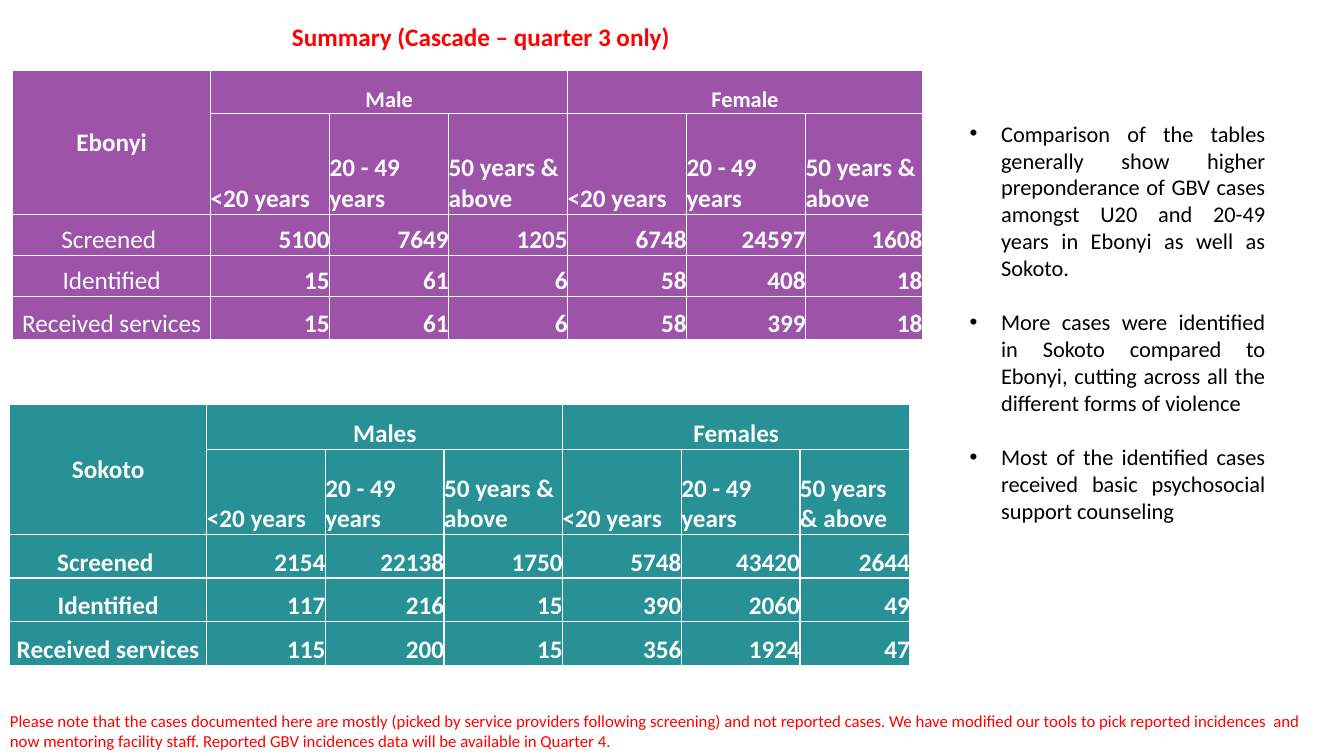
from dataclasses import dataclass

from lxml.etree import SubElement
from pptx import Presentation
from pptx.dml.color import RGBColor
from pptx.enum.text import MSO_ANCHOR, PP_ALIGN
from pptx.oxml.ns import qn
from pptx.slide import Slide
from pptx.table import _Cell
from pptx.text.text import TextFrame, _Paragraph
from pptx.util import Pt

FONT = "Calibri"
RED, BLACK, PALE = "FF0000", "000000", "FAFBFF"
AGES = ["<20 years", "20 - 49 years", "50 years & above"]
STAGES = ["Screened ", "Identified", "Received services"]


@dataclass
class Cascade:
    state: str
    sexes: tuple[str, str]
    counts: list[list[int]]
    fill: str
    left: float
    top: float
    columns: list[float]
    rows: list[float]
    sex_size: float
    bold_stages: bool


CASCADES = [
    Cascade(
        "Ebonyi", ("Male", "Female"),
        [[5100, 7649, 1205, 6748, 24597, 1608],
         [15, 61, 6, 58, 408, 18],
         [15, 61, 6, 58, 399, 18]],
        "9D53A7", 9, 50.5, [141.5] + [85] * 5 + [83.5],
        [30.5, 72, 29.5, 29.5, 30.5], 16, False,
    ),
    Cascade(
        "Sokoto", ("Males", "Females"),
        [[2154, 22138, 1750, 5748, 43420, 2644],
         [117, 216, 15, 390, 2060, 49],
         [115, 200, 15, 356, 1924, 47]],
        "289195", 6.75, 289, [141] + [84.75] * 5 + [78.5],
        [32, 61, 31, 31, 31.5], 18, True,
    ),
]

FINDINGS = [
    "Comparison of the tables generally show higher preponderance of GBV cases "
    "amongst U20 and 20-49 years in Ebonyi as well as Sokoto. ",
    "More cases were identified in Sokoto compared to Ebonyi, cutting across all "
    "the different forms of violence",
    "Most of the identified cases received basic psychosocial support counseling ",
]
NOTE = (
    "Please note that the cases documented here are mostly (picked by service "
    "providers following screening) and not reported cases. We have modified our "
    "tools to pick reported incidences  and now mentoring facility staff. Reported "
    "GBV incidences data will be available in Quarter 4."
)


def rgb(color: str) -> RGBColor:
    return RGBColor.from_string(color)


def write(paragraph: _Paragraph, text: str, *, size: float, color: str,
          bold: bool = False, align: PP_ALIGN = PP_ALIGN.LEFT) -> None:
    paragraph.alignment = align
    run = paragraph.add_run()
    run.text = text
    run.font.name = FONT
    run.font.size = Pt(size)
    run.font.bold = bold
    run.font.color.rgb = rgb(color)


def add_text_frame(slide: Slide, left: float, top: float,
                   width: float, height: float) -> TextFrame:
    box = slide.shapes.add_textbox(Pt(left), Pt(top), Pt(width), Pt(height))
    box.text_frame.word_wrap = True
    return box.text_frame


def add_bullet(paragraph: _Paragraph, indent: float) -> None:
    properties = paragraph._p.get_or_add_pPr()
    properties.set("marL", str(Pt(indent)))
    properties.set("indent", str(-Pt(indent)))
    SubElement(properties, qn("a:buFont"), typeface="Arial")
    SubElement(properties, qn("a:buChar"), char="•")


def style_cell(cell: _Cell, fill: str) -> None:
    properties = cell._tc.get_or_add_tcPr()
    for side in ("lnL", "lnR", "lnT", "lnB"):
        line = SubElement(properties, qn(f"a:{side}"), w=str(Pt(1)))
        solid = SubElement(line, qn("a:solidFill"))
        SubElement(solid, qn("a:srgbClr"), val=PALE)
    cell.fill.solid()
    cell.fill.fore_color.rgb = rgb(fill)
    cell.margin_left = cell.margin_right = 0
    cell.margin_top = cell.margin_bottom = 0
    cell.vertical_anchor = MSO_ANCHOR.BOTTOM


def add_cascade(slide: Slide, cascade: Cascade) -> None:
    table = slide.shapes.add_table(
        len(cascade.rows), len(cascade.columns), Pt(cascade.left), Pt(cascade.top),
        Pt(sum(cascade.columns)), Pt(sum(cascade.rows)),
    ).table
    table.first_row = table.horz_banding = False
    for column, width in zip(table.columns, cascade.columns):
        column.width = Pt(width)
    for row, height in zip(table.rows, cascade.rows):
        row.height = Pt(height)
    for cell in table.iter_cells():
        style_cell(cell, cascade.fill)

    def fill_in(row: int, column: int, text: str, align: PP_ALIGN,
                size: float = 18, bold: bool = True) -> None:
        paragraph = table.cell(row, column).text_frame.paragraphs[0]
        write(paragraph, text, size=size, color=PALE, bold=bold, align=align)

    table.cell(0, 0).merge(table.cell(1, 0))
    table.cell(0, 0).vertical_anchor = MSO_ANCHOR.MIDDLE
    fill_in(0, 0, cascade.state, PP_ALIGN.CENTER)
    for index, sex in enumerate(cascade.sexes):
        first = 1 + index * len(AGES)
        table.cell(0, first).merge(table.cell(0, first + len(AGES) - 1))
        fill_in(0, first, sex, PP_ALIGN.CENTER, size=cascade.sex_size)
        for column, age in enumerate(AGES, first):
            fill_in(1, column, age, PP_ALIGN.LEFT)
    for row, (stage, counts) in enumerate(zip(STAGES, cascade.counts), 2):
        fill_in(row, 0, stage, PP_ALIGN.CENTER, bold=cascade.bold_stages)
        for column, count in enumerate(counts, 1):
            fill_in(row, column, str(count), PP_ALIGN.RIGHT)


def add_findings(slide: Slide) -> None:
    frame = add_text_frame(slide, 685.5, 82, 225.5, 320)
    for index, finding in enumerate(FINDINGS):
        paragraph = frame.add_paragraph() if index else frame.paragraphs[0]
        if index:
            paragraph.space_before = Pt(19.5)
        add_bullet(paragraph, 22.5)
        write(paragraph, finding, size=16, color=BLACK, align=PP_ALIGN.JUSTIFY)


def main() -> None:
    presentation = Presentation()
    presentation.slide_width, presentation.slide_height = Pt(960), Pt(540)
    slide = presentation.slides.add_slide(presentation.slide_layouts[6])
    for cascade in CASCADES:
        add_cascade(slide, cascade)
    note = add_text_frame(slide, 0, 504, 948, 36)
    write(note.paragraphs[0], NOTE, size=12, color=RED)
    title = add_text_frame(slide, 201.5, 11.5, 588, 29)
    write(title.paragraphs[0], "Summary (Cascade – quarter 3 only)",
          size=18, color=RED, bold=True)
    add_findings(slide)
    presentation.save("out.pptx")


if __name__ == "__main__":
    main()
